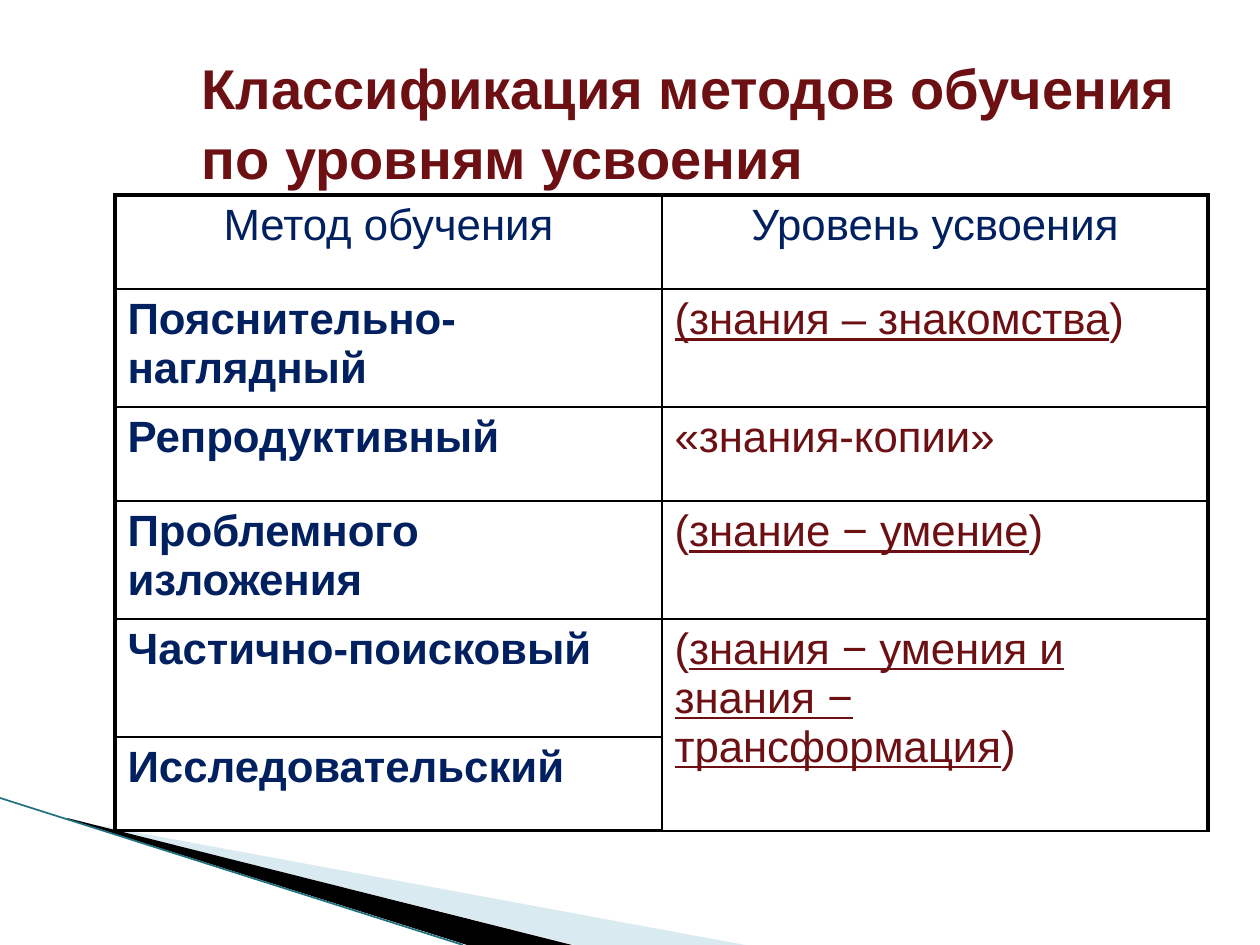
"""Build a slide with a table of teaching methods and levels of learning."""
from lxml import etree
from pptx import Presentation
from pptx.dml.color import RGBColor
from pptx.enum.text import MSO_ANCHOR, MSO_AUTO_SIZE, PP_ALIGN
from pptx.oxml.ns import qn
from pptx.util import Emu, Pt

LEFT, CENTER = PP_ALIGN.LEFT, PP_ALIGN.CENTER
MIDDLE, NO_AUTOFIT = MSO_ANCHOR.MIDDLE, MSO_AUTO_SIZE.NONE
PX = 914400 / 126
MAROON = RGBColor(0x6D, 0x10, 0x14)
NAVY = RGBColor(0x00, 0x20, 0x60)
BLACK = RGBColor(0, 0, 0)
PALE_BLUE = RGBColor(0xA0, 0xCB, 0xDC)
TEAL = RGBColor(0x1F, 0x70, 0x80)
THICK, THIN = Pt(2.25), Pt(1)

TITLE = "Классификация методов обучения по уровням усвоения"
TITLE_BOX = (189, 42, 1008, 157)
HEADINGS = ("Метод обучения", "Уровень усвоения")
METHODS = (
    "Пояснительно-наглядный",
    "Репродуктивный",
    "Проблемного изложения",
    "Частично-поисковый",
    "Исследовательский",
)
LEVELS = (
    (("(знания – знакомства", True), (")", False)),
    (("«знания-копии»", False),),
    (("(", False), ("знание − умение", True), (")", False)),
    (("(", False), ("знания − умения и знания − трансформация", True), (")", False)),
)
TABLE_ORIGIN = (115, 195)
COLUMN_WIDTHS = (547, 546)
ROW_HEIGHTS = (94, 118, 94, 118, 118, 94)
WEDGES = (
    (((69, 820), (745, 945), (575, 945), (69, 819)), PALE_BLUE, 40),
    (((67, 818), (572, 945), (467, 945), (68, 819)), BLACK, 100),
)
EDGE_LINE = (0, 798, 463, 945)


def px(*values):
    return [Emu(round(value * PX)) for value in values]


def add_span(para, text, color, **formats):
    span = para.add_run()
    span.text = text
    span.font.color.rgb = color
    for name, value in {"name": "Arial", **formats}.items():
        setattr(span.font, name, value)


def add_wedge(page, points, color, opacity):
    builder = page.shapes.build_freeform(*points[0], scale=PX)
    builder.add_line_segments(points[1:], close=True)
    wedge = builder.convert_to_shape()
    wedge.shadow.inherit = False
    wedge.fill.solid()
    wedge.fill.fore_color.rgb = color
    wedge.line.fill.background()
    if opacity < 100:
        tone = wedge.fill._xPr.find(".//" + qn("a:srgbClr"))
        etree.SubElement(tone, qn("a:alpha"), val=str(opacity * 1000))


def add_edge_line(page):
    line = page.shapes.add_connector(1, *px(*EDGE_LINE))
    line.line.color.rgb = TEAL
    line.line.width = Pt(0.95)
    etree.SubElement(line._element.spPr, qn("a:effectLst"))


def set_borders(cell, widths):
    properties = cell._tc.get_or_add_tcPr()
    for index, (side, width) in enumerate(widths.items()):
        border = etree.Element(qn("a:" + side), w=str(width))
        fill = etree.SubElement(border, qn("a:solidFill"))
        etree.SubElement(fill, qn("a:srgbClr"), val=str(BLACK))
        properties.insert(index, border)


def add_title(page):
    title = page.shapes.title
    title.left, title.top, title.width, title.height = px(*TITLE_BOX)
    frame = title.text_frame
    formats = {"word_wrap": True, "auto_size": NO_AUTOFIT, "vertical_anchor": MIDDLE}
    for name, value in formats.items():
        setattr(frame, name, value)
    para = frame.paragraphs[0]
    para.alignment = LEFT
    para.line_spacing = 1.04
    add_span(para, TITLE, MAROON, size=Pt(32), bold=True)


def add_methods_table(page):
    row_count, column_count = len(ROW_HEIGHTS), len(COLUMN_WIDTHS)
    size = (sum(COLUMN_WIDTHS), sum(ROW_HEIGHTS))
    table = page.shapes.add_table(
        row_count, column_count, *px(*TABLE_ORIGIN, *size)
    ).table
    table.first_row = table.horz_banding = False
    for column, width in zip(table.columns, px(*COLUMN_WIDTHS)):
        column.width = width
    for row, height in zip(table.rows, px(*ROW_HEIGHTS)):
        row.height = height
    last_row, last_column = row_count - 1, column_count - 1
    for r in range(row_count):
        for c in range(column_count):
            cell = table.cell(r, c)
            cell.fill.background()
            set_borders(cell, {
                "lnL": THICK if c == 0 else THIN,
                "lnR": THICK if c == last_column else THIN,
                "lnT": THICK if r == 0 else THIN,
                "lnB": THICK if r == last_row else THIN,
            })
    table.cell(last_row - 1, last_column).merge(table.cell(last_row, last_column))

    for c, heading in enumerate(HEADINGS):
        para = table.cell(0, c).text_frame.paragraphs[0]
        para.alignment = CENTER
        add_span(para, heading, NAVY, size=Pt(25), bold=False)
    for r, method in enumerate(METHODS, 1):
        para = table.cell(r, 0).text_frame.paragraphs[0]
        add_span(para, method, NAVY, size=Pt(25), bold=True)
    for r, level in enumerate(LEVELS, 1):
        para = table.cell(r, 1).text_frame.paragraphs[0]
        for text, underlined in level:
            add_span(para, text, MAROON, size=Pt(25), bold=False, underline=underlined)


def main():
    deck = Presentation()
    deck.slide_width, deck.slide_height = px(1260, 945)
    page = deck.slides.add_slide(deck.slide_layouts[5])
    for wedge in WEDGES:
        add_wedge(page, *wedge)
    add_edge_line(page)
    add_title(page)
    add_methods_table(page)
    deck.save("out.pptx")


if __name__ == "__main__":
    main()
